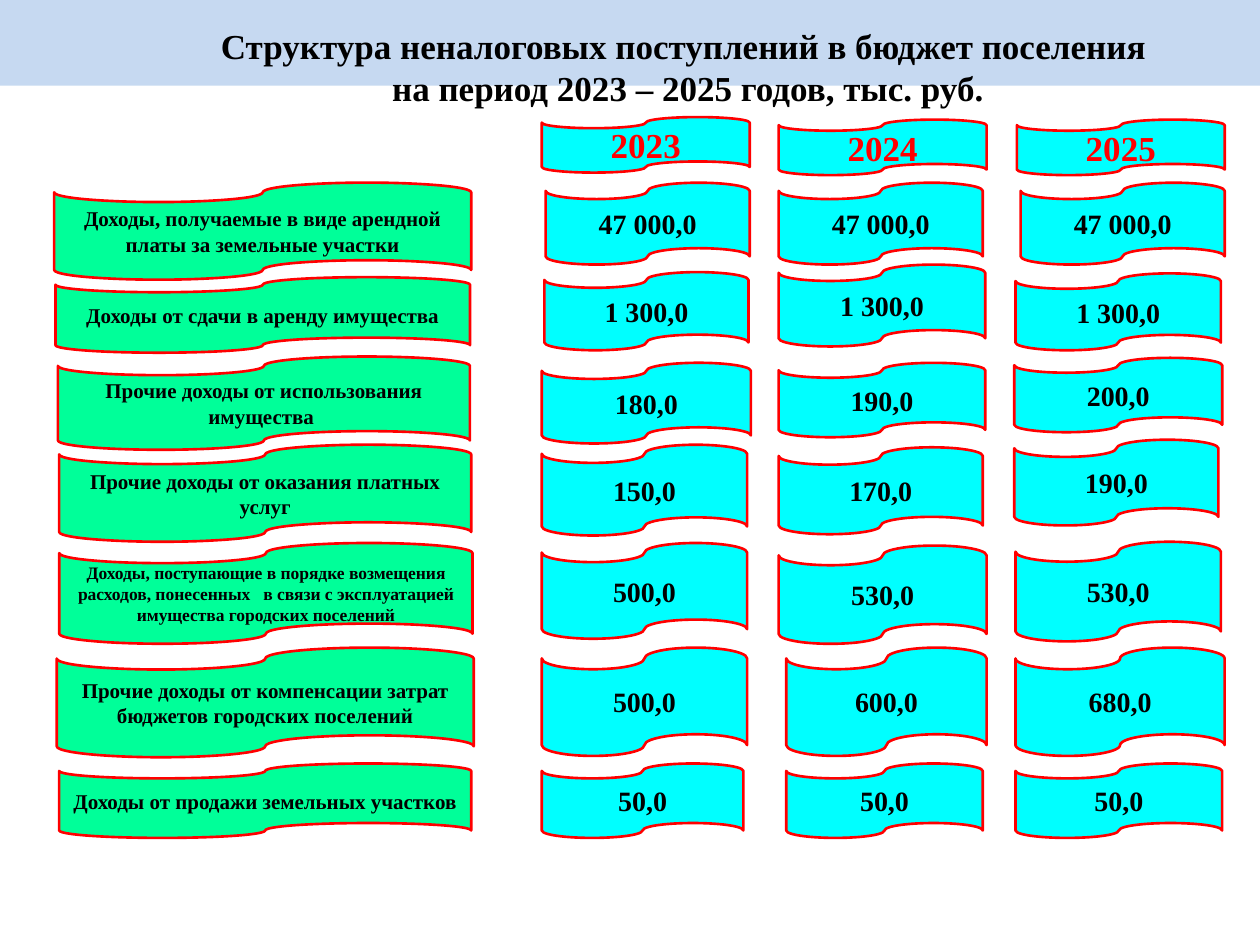
from dataclasses import dataclass

from pptx import Presentation
from pptx.dml.color import RGBColor
from pptx.enum.shapes import MSO_SHAPE
from pptx.enum.text import MSO_ANCHOR, MSO_AUTO_SIZE, PP_ALIGN
from pptx.util import Pt

RECTANGLE = MSO_SHAPE.RECTANGLE
TAPE = MSO_SHAPE.FLOWCHART_PUNCHED_TAPE
MIDDLE = MSO_ANCHOR.MIDDLE
CENTER = PP_ALIGN.CENTER
PX = 9144  # 100 px to the inch


@dataclass(frozen=True)
class Theme:
    font: str = "Times New Roman"
    band: str = "C6D9F1"
    source_fill: str = "00FF99"
    amount_fill: str = "00FFFF"
    accent: str = "FF0000"
    ink: str = "000000"
    heading_size: int = 20
    amount_size: int = 16
    source_size: int = 12
    long_source_size: int = 10
    line_width: float = 1.5


THEME = Theme()


def set_text(frame, text, size, color):
    frame.text = text
    frame.word_wrap = True
    frame.auto_size = MSO_AUTO_SIZE.NONE
    frame.vertical_anchor = MIDDLE
    for paragraph in frame.paragraphs:
        paragraph.alignment = CENTER
        for run in paragraph.runs:
            run.font.name = THEME.font
            run.font.size = Pt(size)
            run.font.bold = True
            run.font.color.rgb = RGBColor.from_string(color)


def add_tape(box, text, fill, size, color=THEME.ink):
    tape = slide.shapes.add_shape(TAPE, *(value * PX for value in box))
    tape.shadow.inherit = False
    tape.fill.solid()
    tape.fill.fore_color.rgb = RGBColor.from_string(fill)
    tape.line.color.rgb = RGBColor.from_string(THEME.accent)
    tape.line.width = Pt(THEME.line_width)
    set_text(tape.text_frame, text, size, color)


# Boxes are (left, top, width, height) in px.
YEARS = [
    ("2023", (430, 93, 165, 44)),
    ("2024", (618, 95, 165, 44)),
    ("2025", (807, 95, 165, 44)),
]
# Each income source with its box, then the amount and box for every year.
INCOME = [
    ("Доходы, получаемые в виде арендной платы за земельные участки",
     THEME.source_size, (43, 145, 331, 77),
     [("47 000,0", (433, 145, 162, 65)),
      ("47 000,0", (618, 145, 162, 65)),
      ("47 000,0", (810, 145, 162, 65))]),
    ("Доходы от сдачи в аренду имущества",
     THEME.source_size, (44, 220, 329, 60),
     [("1 300,0", (432, 216, 162, 62)),
      ("1 300,0", (618, 210, 164, 65)),
      ("1 300,0", (806, 217, 163, 61))]),
    ("Прочие доходы от использования имущества ",
     THEME.source_size, (46, 283, 327, 74),
     [("180,0", (430, 288, 166, 64)),
      ("190,0", (618, 288, 164, 59)),
      ("200,0", (805, 284, 165, 59))]),
    ("Прочие доходы от оказания платных услуг",
     THEME.source_size, (47, 353, 327, 77),
     [("150,0", (430, 353, 163, 72)),
      ("170,0", (618, 355, 162, 69)),
      ("190,0", (805, 349, 162, 68))]),
    ("Доходы, поступающие в порядке возмещения расходов, понесенных   "
     "в связи с эксплуатацией имущества городских поселений",
     THEME.long_source_size, (47, 431, 328, 80),
     [("500,0", (430, 431, 163, 76)),
      ("530,0", (618, 433, 165, 78)),
      ("530,0", (806, 430, 163, 79))]),
    ("Прочие доходы от компенсации затрат бюджетов городских поселений",
     THEME.source_size, (45, 514, 331, 87),
     [("500,0", (430, 514, 163, 86)),
      ("600,0", (624, 514, 159, 86)),
      ("680,0", (806, 514, 166, 86))]),
    ("Доходы от продажи земельных участков",
     THEME.source_size, (47, 606, 327, 59),
     [("50,0", (430, 606, 160, 59)),
      ("50,0", (624, 606, 156, 59)),
      ("50,0", (806, 606, 164, 59))]),
]

presentation = Presentation()
presentation.slide_width = 1000 * PX
presentation.slide_height = 750 * PX
slide = presentation.slides.add_slide(presentation.slide_layouts[5])

title = slide.shapes.title
title.left, title.top = 96 * PX, 14 * PX
title.width, title.height = 900 * PX, 78 * PX
set_text(
    title.text_frame,
    "Структура неналоговых поступлений в бюджет поселения \v"
    "на период 2023 – 2025 годов, тыс. руб.",
    THEME.heading_size,
    THEME.ink,
)

band = slide.shapes.add_shape(RECTANGLE, 0, 0, 1000 * PX, 68 * PX)
band.shadow.inherit = False
band.fill.solid()
band.fill.fore_color.rgb = RGBColor.from_string(THEME.band)
band.line.fill.background()
title._element.addprevious(band._element)  # the band lies behind the title

for year, box in YEARS:
    add_tape(box, year, THEME.amount_fill, THEME.heading_size, THEME.accent)

for source, source_size, source_box, amounts in INCOME:
    add_tape(source_box, source, THEME.source_fill, source_size)
    for amount, box in amounts:
        add_tape(box, amount, THEME.amount_fill, THEME.amount_size)

presentation.save("out.pptx")
